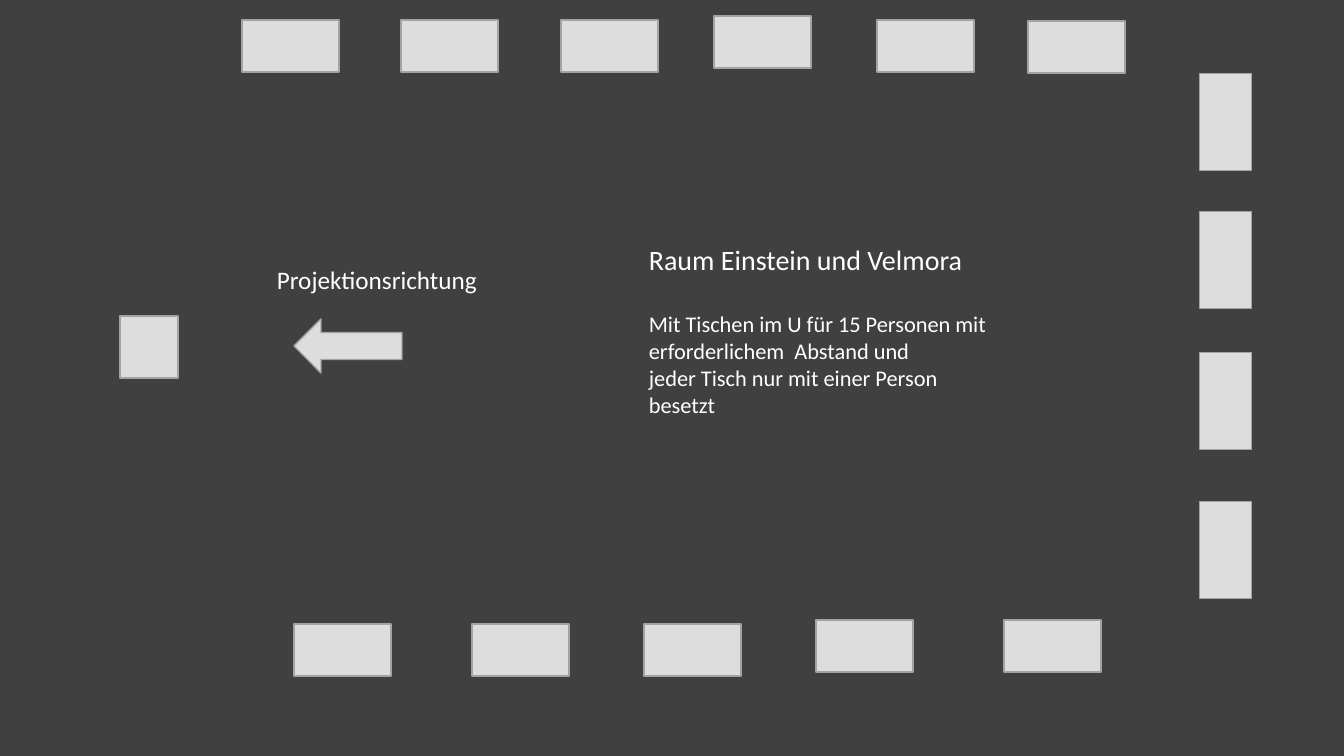
"""Build the seating plan of a room with single tables set in a U."""
from pptx import Presentation, util as u
from pptx.dml.color import RGBColor
from pptx.enum import shapes, text

PX = 12192000 / 1344
DARK = RGBColor(0x40, 0x40, 0x40)
LIGHT = RGBColor(0xDD, 0xDD, 0xDD)
EDGE = RGBColor(0xA3, 0xA3, 0xA3)
WHITE = RGBColor(0xFF, 0xFF, 0xFF)
RECT = shapes.MSO_SHAPE.RECTANGLE
ARROW = shapes.MSO_SHAPE.LEFT_ARROW
LONG, DEEP = 97, 52

deck = Presentation()
deck.slide_width, deck.slide_height = round(1344 * PX), round(756 * PX)
slide = deck.slides.add_slide(deck.slide_layouts[6])
slide.background.fill.solid()
slide.background.fill.fore_color.rgb = DARK


def add_block(kind, *box, turn=0):
    block = slide.shapes.add_shape(kind, *[round(n * PX) for n in box])
    block.rotation = turn
    block.shadow.inherit = False
    block.fill.solid()
    block.fill.fore_color.rgb = LIGHT
    block.line.color.rgb = EDGE
    block.line.width = u.Pt(1)


def add_label(box, lines):
    label = slide.shapes.add_textbox(*[round(n * PX) for n in box])
    frame = label.text_frame
    frame.word_wrap = True
    frame.auto_size = text.MSO_AUTO_SIZE.SHAPE_TO_FIT_TEXT
    frame.text = "\n".join(words for words, size in lines)
    for para, (words, size) in zip(frame.paragraphs, lines):
        font = para.runs[0].font
        font.name, font.size = "Calibri", u.Pt(size)
        font.color.rgb = WHITE
    return frame


upper = [(242, 20), (401, 20), (561, 20), (714, 16), (877, 20), (1028, 21)]
lower = [(294, 624), (472, 624), (644, 624), (816, 620), (1004, 620)]
for left, top in upper + lower:
    add_block(RECT, left, top, LONG, DEEP)
for top in (96, 234, 375, 524):
    add_block(RECT, 1177, top, LONG, DEEP, turn=90)

add_block(RECT, 120, 316, 58, 62)
add_block(ARROW, 294, 319, 108, 54)

add_label((267, 259, 230, 40), [("Projektionsrichtung", 18)])
note = add_label((639, 238, 377, 217), [
    ("Raum Einstein und Velmora", 20),
    ("Mit Tischen im U für 15 Personen mit erforderlichem  Abstand und", 16),
    ("jeder Tisch nur mit einer Person besetzt", 16),
])
note.paragraphs[0].space_after = u.Pt(24)

deck.save("out.pptx")
